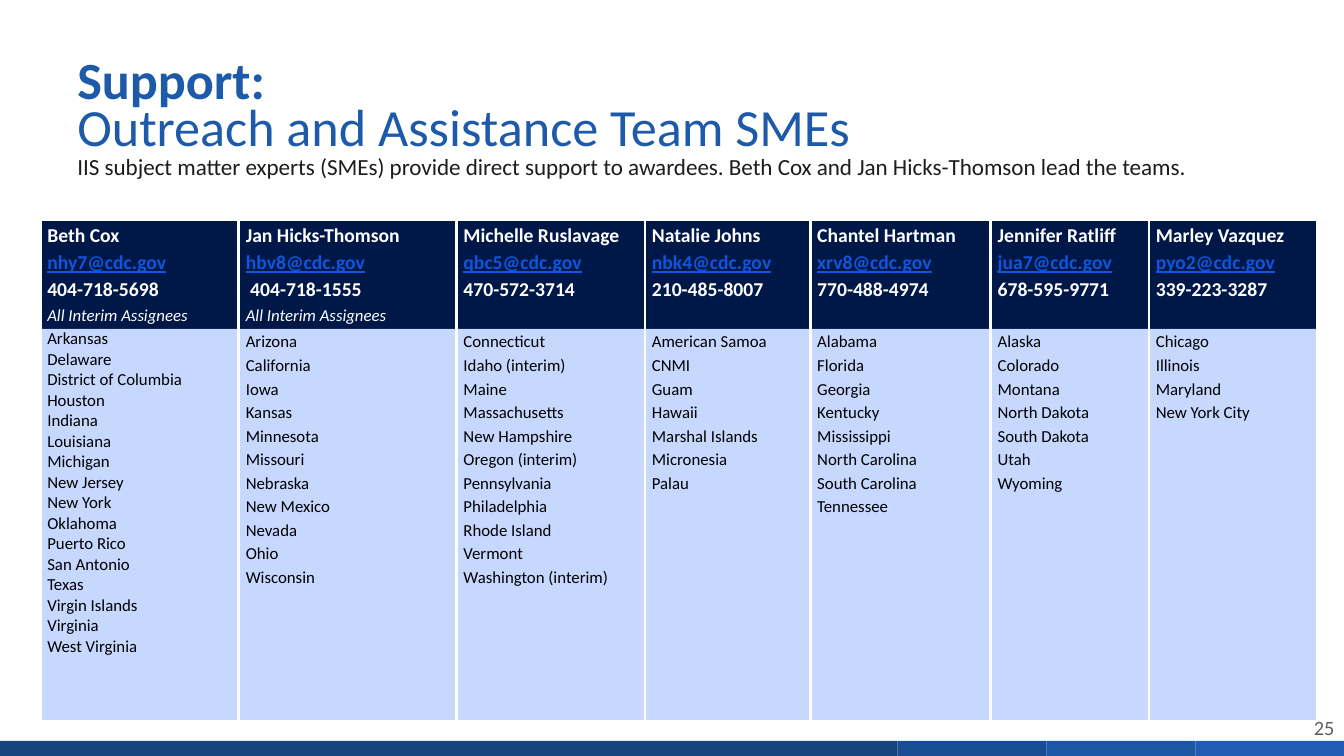
"""Build the slide listing outreach and assistance team experts by awardee."""
import pptx
import pptx.util
import pptx.dml.color
import pptx.enum.shapes
import pptx.enum.text
import pptx.oxml
import pptx.oxml.ns

Pt = pptx.util.Pt
PP_ALIGN = pptx.enum.text.PP_ALIGN
ANCHOR = pptx.enum.text.MSO_ANCHOR
AUTO_SIZE = pptx.enum.text.MSO_AUTO_SIZE
RECT = pptx.enum.shapes.MSO_SHAPE.RECTANGLE

TITLE = ("Support:", "Outreach and Assistance Team SMEs")
INTRO = ("IIS subject matter experts (SMEs) provide direct support to awardees. "
         "Beth Cox and Jan Hicks-Thomson lead the teams.")
PAGE = "25"
ROLE = "All Interim Assignees"
EXPERTS = [
    {"name": "Beth Cox", "mail": "nhy7@cdc.gov", "phone": "404-718-5698", "role": ROLE,
     "width": 141.8, "spacing": 1.0,
     "areas": ["Arkansas", "Delaware", "District of Columbia", "Houston", "Indiana",
               "Louisiana", "Michigan", "New Jersey", "New York", "Oklahoma",
               "Puerto Rico", "San Antonio", "Texas", "Virgin Islands", "Virginia",
               "West Virginia"]},
    {"name": "Jan Hicks-Thomson", "mail": "hbv8@cdc.gov", "phone": " 404-718-1555",
     "role": ROLE, "width": 155.5,
     "areas": ["Arizona", "California", "Iowa", "Kansas", "Minnesota", "Missouri",
               "Nebraska", "New Mexico", "Nevada", "Ohio", "Wisconsin"]},
    {"name": "Michelle Ruslavage", "mail": "qbc5@cdc.gov", "phone": "470-572-3714",
     "width": 134.6,
     "areas": ["Connecticut", "Idaho (interim)", "Maine", "Massachusetts",
               "New Hampshire", "Oregon (interim)", "Pennsylvania", "Philadelphia",
               "Rhode Island", "Vermont", "Washington (interim)"]},
    {"name": "Natalie Johns", "mail": "nbk4@cdc.gov", "phone": "210-485-8007",
     "width": 118.1,
     "areas": ["American Samoa", "CNMI", "Guam", "Hawaii", "Marshal Islands",
               "Micronesia", "Palau"]},
    {"name": "Chantel Hartman", "mail": "xrv8@cdc.gov", "phone": "770-488-4974",
     "width": 128.9,
     "areas": ["Alabama", "Florida", "Georgia", "Kentucky", "Mississippi",
               "North Carolina", "South Carolina", "Tennessee"]},
    {"name": "Jennifer Ratliff", "mail": "jua7@cdc.gov", "phone": "678-595-9771",
     "width": 113,
     "areas": ["Alaska", "Colorado", "Montana", "North Dakota", "South Dakota",
               "Utah", "Wyoming"]},
    {"name": "Marley Vazquez", "mail": "pyo2@cdc.gov", "phone": "339-223-3287",
     "width": 120.2,
     "areas": ["Chicago", "Illinois", "Maryland", "New York City"]},
]
COLORS = {
    "title": "1E5AAA", "text": "1D1D1D", "page": "5F5F5F", "white": "FFFFFF",
    "black": "000000", "link": "0F56DC", "header": "001848", "areas": "B9CFFF",
    "band1": "164380", "band2": "194D93", "band3": "1C56A4", "band4": "1E5DB2",
}
BANDS = [("band1", 641), ("band2", 106.4), ("band3", 106.4), ("band4", 106.2)]
BAND_TOP, BAND_HEIGHT = 529.2, 10.8
TABLE_LEFT, TABLE_TOP = 28.8, 157
ROW_HEIGHTS = (78, 280)
CELL_SPACING = 1.15


def rgb(key):
    """Return the named colour."""
    return pptx.dml.color.RGBColor.from_string(COLORS[key])


def add_run(p, text, size=12, color="black", bold=False, italic=False, underline=False):
    """Add a formatted run to a paragraph."""
    r = p.add_run()
    r.text = text
    f = r.font
    f.name, f.size, f.bold, f.italic, f.underline = "Calibri", Pt(size), bold, italic, underline
    f.color.rgb = rgb(color)


def place(sp, left, top, width, height):
    """Move and size a shape, in points."""
    sp.left, sp.top, sp.width, sp.height = map(Pt, (left, top, width, height))


def fill_cell(cell, lines, color, open_side, spacing, alpha=None):
    """Write formatted lines in a cell with white borders except on one side."""
    cell.margin_left = cell.margin_right = Pt(5)
    cell.margin_top = cell.margin_bottom = 0
    tcPr = cell._tc.get_or_add_tcPr()
    for side in "LRTB":
        paint = ("<a:noFill/>" if side == open_side else
                 f'<a:solidFill><a:srgbClr val="{COLORS["white"]}"/></a:solidFill>')
        tcPr.append(pptx.oxml.parse_xml(
            f'<a:ln{side} {pptx.oxml.ns.nsdecls("a")} w="{Pt(2.25)}">{paint}</a:ln{side}>'))
    cell.fill.solid()
    cell.fill.fore_color.rgb = rgb(color)
    if alpha:
        clr = tcPr.find(pptx.oxml.ns.qn("a:solidFill"))[0]
        clr.append(pptx.oxml.parse_xml(
            f'<a:alpha {pptx.oxml.ns.nsdecls("a")} val="{alpha * 1000}"/>'))
    tf = cell.text_frame
    for i, (text, fmt) in enumerate(lines):
        p = tf.add_paragraph() if i else tf.paragraphs[0]
        p.line_spacing = spacing
        add_run(p, text, **fmt)


def header_lines(expert):
    """Return the contact lines of an expert with their formats."""
    strong = {"size": 14, "bold": True, "color": "white"}
    lines = [(expert["name"], strong),
             (expert["mail"], {**strong, "color": "link", "underline": True}),
             (expert["phone"], strong)]
    if "role" in expert:
        lines.append((expert["role"], {"color": "white", "italic": True}))
    return lines


def add_heading(slide):
    """Fill the title and body placeholders."""
    title, body = slide.shapes.title, slide.placeholders[1]
    place(title, 48, 21.6, 864, 90)
    tf = title.text_frame
    tf.auto_size, tf.vertical_anchor, tf.margin_bottom = AUTO_SIZE.NONE, ANCHOR.BOTTOM, 0
    p = tf.paragraphs[0]
    p.alignment, p.line_spacing = PP_ALIGN.LEFT, 0.76
    add_run(p, TITLE[0], size=37.3, color="title", bold=True)
    p.add_line_break()
    add_run(p, TITLE[1], size=37.3, color="title")

    place(body, 48, 105, 864, 25)
    tf = body.text_frame
    tf.auto_size = AUTO_SIZE.NONE
    p = tf.paragraphs[0]
    pPr = p._p.get_or_add_pPr()
    pPr.set("marL", "0")
    pPr.set("indent", "0")
    pPr.append(pptx.oxml.parse_xml(f'<a:buNone {pptx.oxml.ns.nsdecls("a")}/>'))
    add_run(p, INTRO, size=16.5, color="text")


def add_experts(slide):
    """Add the table of experts and their awardees."""
    width = sum(e["width"] for e in EXPERTS)
    table = slide.shapes.add_table(len(ROW_HEIGHTS), len(EXPERTS), Pt(TABLE_LEFT),
                                   Pt(TABLE_TOP), Pt(width), Pt(sum(ROW_HEIGHTS))).table
    table.first_row = table.horz_banding = False
    for row, height in zip(table.rows, ROW_HEIGHTS):
        row.height = Pt(height)
    for c, expert in enumerate(EXPERTS):
        table.columns[c].width = Pt(expert["width"])
        fill_cell(table.cell(0, c), header_lines(expert), "header", "B", CELL_SPACING)
        fill_cell(table.cell(1, c), [(area, {}) for area in expert["areas"]], "areas", "T",
                  expert.get("spacing", CELL_SPACING), alpha=80)


def add_footer(slide):
    """Add the coloured bands and the page number."""
    left = 0
    for color, width in BANDS:
        sp = slide.shapes.add_shape(RECT, Pt(left), Pt(BAND_TOP), Pt(width), Pt(BAND_HEIGHT))
        sp.shadow.inherit = False
        sp.fill.solid()
        sp.fill.fore_color.rgb = rgb(color)
        sp.line.fill.background()
        left += width
    tf = slide.shapes.add_textbox(Pt(887.8), Pt(507), Pt(72.5), Pt(25)).text_frame
    tf.word_wrap = True
    p = tf.paragraphs[0]
    p.alignment = PP_ALIGN.RIGHT
    add_run(p, PAGE, size=14.5, color="page")


def main():
    """Build and save the slide."""
    prs = pptx.Presentation()
    prs.slide_width, prs.slide_height = Pt(960), Pt(540)
    slide = prs.slides.add_slide(prs.slide_layouts[1])
    add_heading(slide)
    add_experts(slide)
    add_footer(slide)
    prs.save("out.pptx")


if __name__ == "__main__":
    main()
